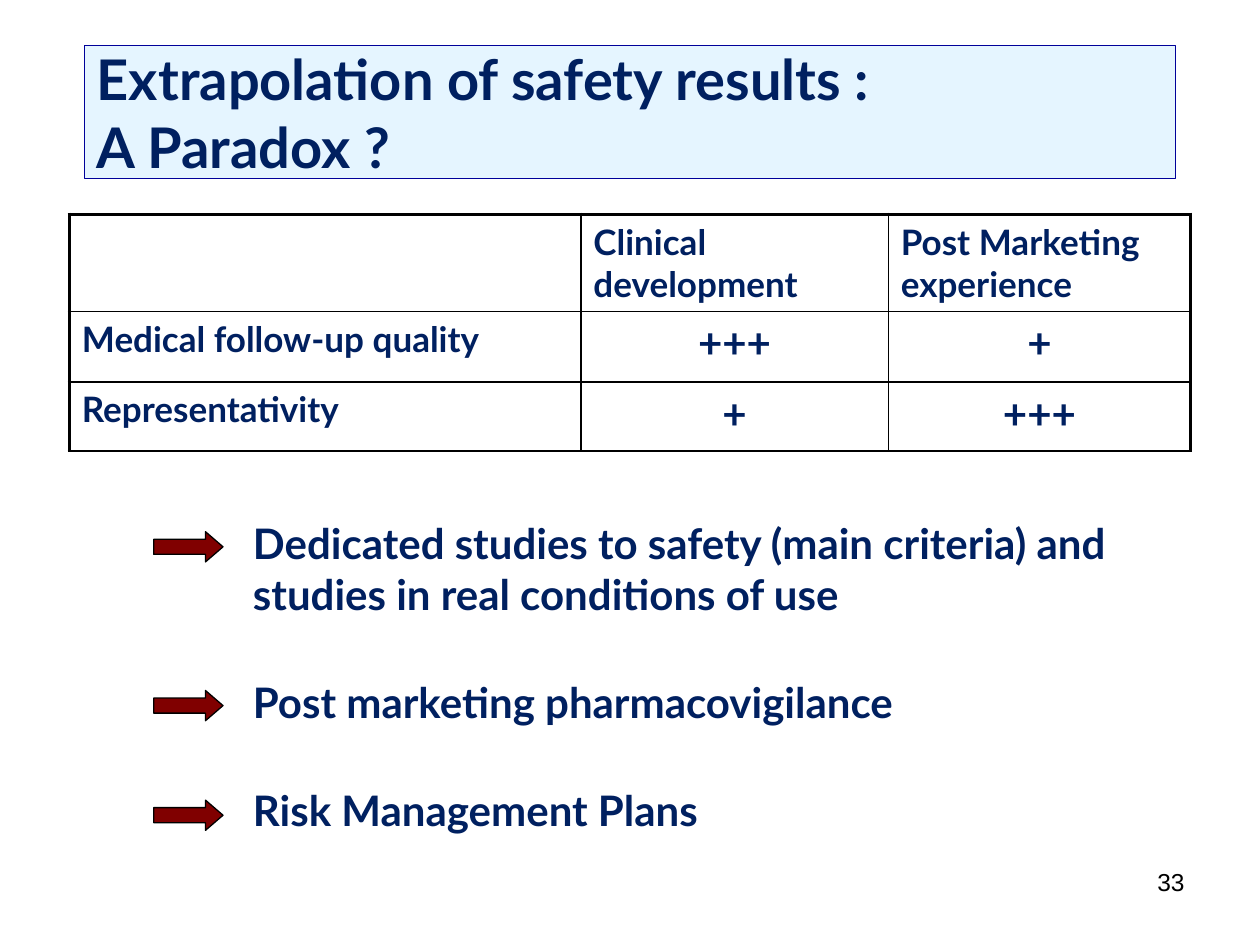
import pptx
import pptx.dml.color
import pptx.enum.shapes
import pptx.enum.text
import pptx.oxml
import pptx.oxml.ns
import pptx.util

Pt = pptx.util.Pt
Shape = pptx.enum.shapes.MSO_SHAPE
Align = pptx.enum.text.PP_ALIGN
rgb = pptx.dml.color.RGBColor.from_string

theme = {
    "navy": rgb("002060"), "black": rgb("000000"), "edge": rgb("000099"),
    "pale": rgb("CCECFF"), "red": rgb("800000"),
    "title": Pt(32), "body": Pt(24), "cell": Pt(20), "page": Pt(14),
    "thin": 1, "thick": 2.25, "line": Pt(0.75),
}

deck = pptx.Presentation()
deck.slide_width, deck.slide_height = pptx.util.Inches(10), pptx.util.Inches(7.5)
wide, high = deck.slide_width / 100, deck.slide_height / 100
slide = deck.slides.add_slide(deck.slide_layouts[6])
shapes = slide.shapes


def place(left, top, width, height):
    """Turn percentages of the slide into lengths."""
    return [round(n) for n in (left * wide, top * high, width * wide, height * high)]


def write(frame, lines, size, gap=0, align=Align.LEFT, name="Lato", color="navy", bold=True):
    """Fill a text frame, one paragraph a line, with a gap between them."""
    frame.word_wrap = True
    for i, line in enumerate(lines):
        para = frame.paragraphs[0] if i == 0 else frame.add_paragraph()
        para.text, para.alignment = line, align
        para.space_before = Pt(gap if i else 0)
        look = {"name": name, "size": theme[size], "bold": bold}
        for key, value in look.items():
            setattr(para.font, key, value)
        para.font.color.rgb = theme[color]


# Page number
page = shapes.add_textbox(*place(71.7, 91.07, 23.3, 6.93))
write(page.text_frame, ["33"], "page", align=Align.RIGHT, name="Arial", color="black", bold=False)

# Title and arrows
title = shapes.add_shape(Shape.RECTANGLE, *place(6.7, 4.8, 86.6, 14.13))
arrows = [shapes.add_shape(Shape.RIGHT_ARROW, *place(12.2, top, 5.5, 3.2))
          for top in (56.27, 73.07, 84.67)]
for item in [title] + arrows:
    head = item is title
    item.shadow.inherit = False
    item.fill.solid()
    item.fill.fore_color.rgb = theme["pale" if head else "red"]
    item.line.color.rgb = theme["edge" if head else "black"]
    item.line.width = theme["line"]
for arrow in arrows:
    arrow.adjustments[1] = 0.58

tint = title.fill.fore_color._xFill.find(pptx.oxml.ns.qn("a:srgbClr"))
tint.append(pptx.oxml.parse_xml(f'<a:alpha {pptx.oxml.ns.nsdecls("a")} val="50000"/>'))
title.text_frame.vertical_anchor = pptx.enum.text.MSO_ANCHOR.MIDDLE
write(title.text_frame, ["Extrapolation of safety results :", "A Paradox ?"], "title")

# Comparison table
rows = [
    ["", "Clinical development", "Post Marketing experience"],
    ["Medical follow-up quality", "+++", "+"],
    ["Representativity", "+", "+++"],
]
frame = shapes.add_table(3, 3, *place(5.5, 22.67, 89, 25.07))
table = frame.table
table.first_row = table.horz_banding = False
for col, share in zip(table.columns, (40.6, 24.4, 24)):
    col.width = round(share * wide)
for row, share in zip(table.rows, (10.27, 7.47, 7.33)):
    row.height = round(share * high)

for r, row in enumerate(rows):
    for c, text in enumerate(row):
        cell = table.cell(r, c)
        mark = r > 0 and c > 0
        write(cell.text_frame, [text], "body" if mark else "cell",
              align=Align.CENTER if mark else Align.LEFT)
        thick = {"lnL": c == 0, "lnR": c == 2, "lnT": r == 0, "lnB": False}
        props = cell._tc.get_or_add_tcPr()
        for side, heavy in thick.items():
            width = Pt(theme["thick" if heavy else "thin"])
            props.append(pptx.oxml.parse_xml(
                f'<a:{side} {pptx.oxml.ns.nsdecls("a")} w="{width}"><a:solidFill>'
                f'<a:srgbClr val="{theme["black"]}"/></a:solidFill></a:{side}>'))
        cell.fill.background()

# Actions beside the arrows
body = shapes.add_textbox(*place(19.1, 54.13, 77.4, 36.8))
write(body.text_frame, [
    "Dedicated studies to safety (main criteria) and studies in real conditions of use",
    "Post marketing pharmacovigilance",
    "Risk Management Plans",
], "body", gap=33)

deck.save("out.pptx")
